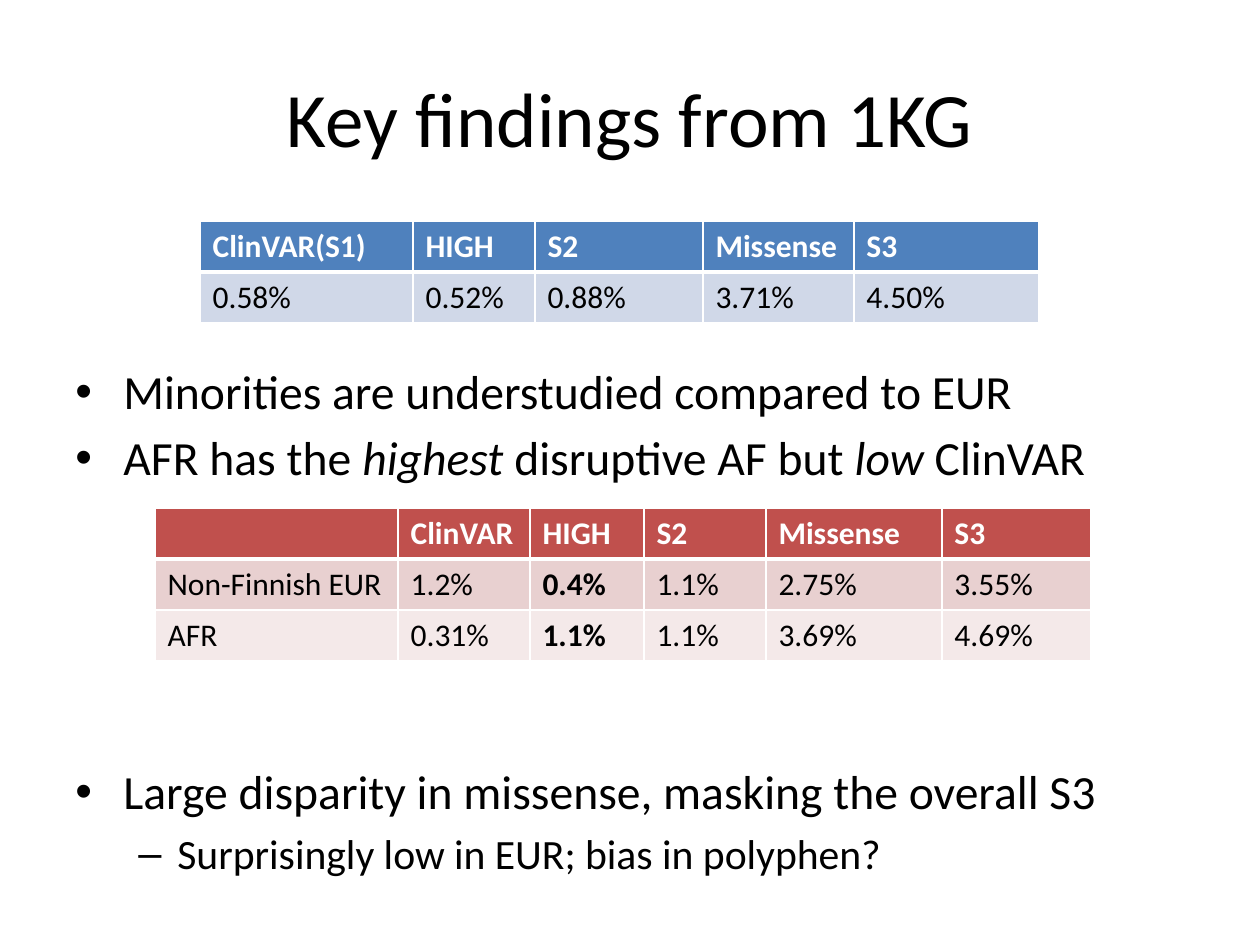
from dataclasses import dataclass

import lxml.etree
import pptx
import pptx.dml.color
import pptx.enum.text
import pptx.oxml.ns
import pptx.util

SCALE = 914400 / 126
FONT = "Calibri"
WHITE = "FFFFFF"
BLACK = "000000"


@dataclass
class Grid:
    left: int
    top: int
    columns: list[int]
    fills: list[str]
    rows: list[list[str]]
    bold_column: int | None = None


@dataclass
class Bullet:
    spans: list[tuple[str, bool]]
    mark: str = "•"
    size: float = 27.2
    margin: int = 48
    hanging: int = 48


@dataclass
class BulletBox:
    top: int
    height: int
    bullets: list[Bullet]


ROW_HEIGHT = 51
GRIDS = [
    Grid(200, 221, [213, 122, 168, 151, 185], ["4F81BD", "D0D8E8"], [
        ["ClinVAR(S1)", "HIGH", "S2", "Missense", "S3"],
        ["0.58%", "0.52%", "0.88%", "3.71%", "4.50%"],
    ]),
    Grid(155, 508, [243, 132, 114, 122, 176, 149], ["C0504D", "E8D0D0", "F4E9E9"], [
        ["", "ClinVAR", "HIGH", "S2", "Missense", "S3"],
        ["Non-Finnish EUR", "1.2%", "0.4%", "1.1%", "2.75%", "3.55%"],
        ["AFR", "0.31%", "1.1%", "1.1%", "3.69%", "4.69%"],
    ], bold_column=2),
]
BULLET_BOXES = [
    BulletBox(356, 140, [
        Bullet([("Minorities are understudied compared to EUR", False)]),
        Bullet([("AFR has the ", False), ("highest", True), (" disruptive AF but ", False),
                ("low ", True), ("ClinVAR", False)]),
    ]),
    BulletBox(756, 136, [
        Bullet([("Large disparity in missense, masking the overall S3", False)]),
        Bullet([("Surprisingly low in EUR; bias in polyphen?", False)], "–", 23.8, 102, 39),
    ]),
]


def px(length: int) -> int:
    return round(length * SCALE)


def color(value: str) -> pptx.dml.color.RGBColor:
    return pptx.dml.color.RGBColor.from_string(value)


def set_font(para, size: float, value: str, bold: bool = False) -> None:
    para.font.name = FONT
    para.font.size = pptx.util.Pt(size)
    para.font.bold = bold
    para.font.color.rgb = color(value)


def place(shape, left: int, top: int, width: int, height: int) -> None:
    shape.left, shape.top = px(left), px(top)
    shape.width, shape.height = px(width), px(height)


def add_element(parent, tag: str, **attributes: str):
    return lxml.etree.SubElement(parent, pptx.oxml.ns.qn(tag), **attributes)


def set_borders(cell, top: int, bottom: int) -> None:
    properties = cell._tc.get_or_add_tcPr()
    for side, points in (("L", 1), ("R", 1), ("T", top), ("B", bottom)):
        line = add_element(properties, f"a:ln{side}", w=str(pptx.util.Pt(points)))
        add_element(add_element(line, "a:solidFill"), "a:srgbClr", val=WHITE)


def draw_grid(page, grid: Grid) -> None:
    table = page.shapes.add_table(
        len(grid.rows), len(grid.columns), px(grid.left), px(grid.top),
        px(sum(grid.columns)), px(ROW_HEIGHT * len(grid.rows))).table
    for column, width in zip(table.columns, grid.columns):
        column.width = px(width)
    for row_index, (texts, fill) in enumerate(zip(grid.rows, grid.fills)):
        table.rows[row_index].height = px(ROW_HEIGHT)
        header = row_index == 0
        for column_index, text in enumerate(texts):
            cell = table.cell(row_index, column_index)
            set_borders(cell, 3 if row_index == 1 else 1, 3 if header else 1)
            cell.fill.solid()
            cell.fill.fore_color.rgb = color(fill)
            cell.text = text
            set_font(cell.text_frame.paragraphs[0], 18, WHITE if header else BLACK,
                     header or column_index == grid.bold_column)


def draw_bullets(page, content: BulletBox) -> None:
    box = page.shapes.add_textbox(px(63), px(content.top), px(1134), px(content.height))
    frame = box.text_frame
    frame.word_wrap = True
    for index, bullet in enumerate(content.bullets):
        para = frame.add_paragraph() if index else frame.paragraphs[0]
        if index:
            para.space_before = pptx.util.Pt(5)
        properties = para._p.get_or_add_pPr()
        properties.set("marL", str(px(bullet.margin)))
        properties.set("indent", str(-px(bullet.hanging)))
        add_element(properties, "a:buFont", typeface="Arial")
        add_element(properties, "a:buChar", char=bullet.mark)
        set_font(para, bullet.size, BLACK)
        for text, italic in bullet.spans:
            span = para.add_run()
            span.text = text
            if italic:
                span.font.italic = True


def draw_title(page, text: str) -> None:
    title = page.shapes.title
    place(title, 63, 38, 1134, 157)
    title.text_frame.text = text
    title.text_frame.vertical_anchor = pptx.enum.text.MSO_ANCHOR.MIDDLE
    para = title.text_frame.paragraphs[0]
    para.alignment = pptx.enum.text.PP_ALIGN.CENTER
    set_font(para, 44, BLACK)


def main() -> None:
    deck = pptx.Presentation()
    deck.slide_width, deck.slide_height = px(1260), px(945)
    page = deck.slides.add_slide(deck.slide_layouts.get_by_name("Title Only"))
    draw_title(page, "Key findings from 1KG")
    for content in BULLET_BOXES:
        draw_bullets(page, content)
    for grid in GRIDS:
        draw_grid(page, grid)
    deck.save("out.pptx")


if __name__ == "__main__":
    main()
